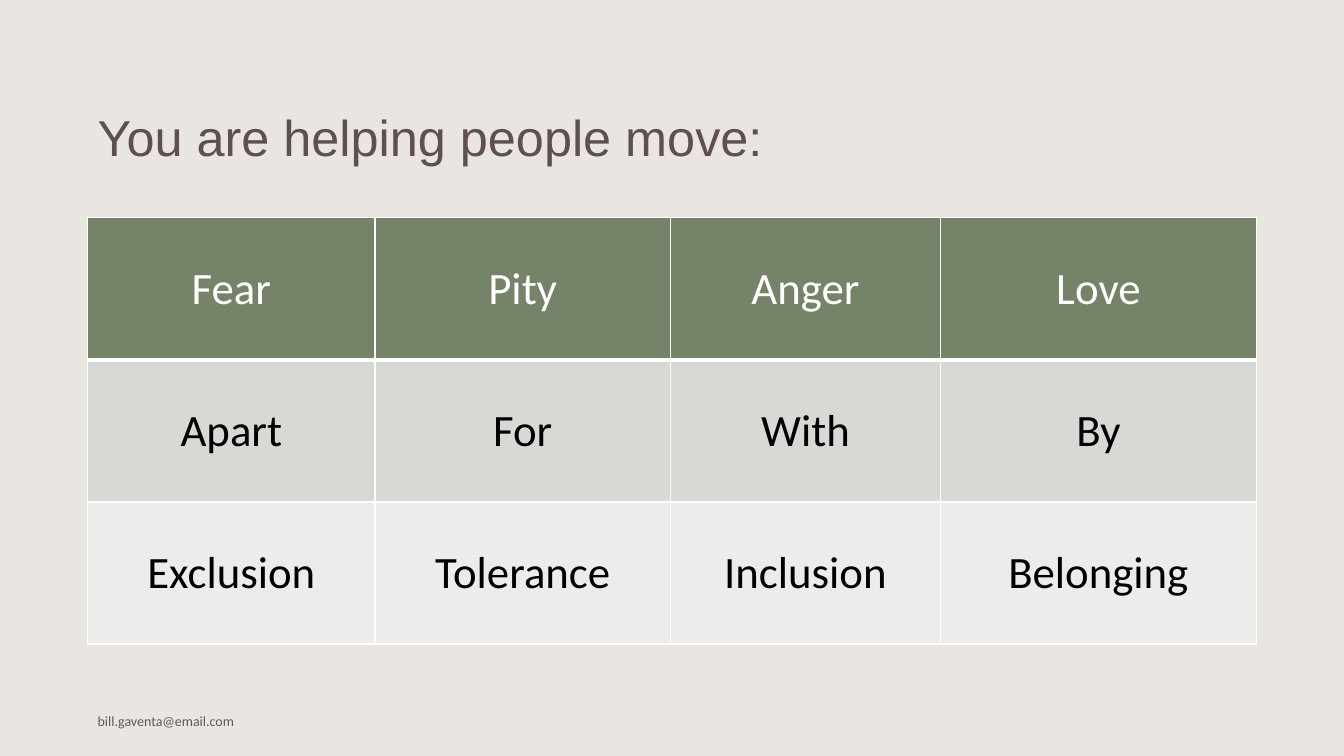
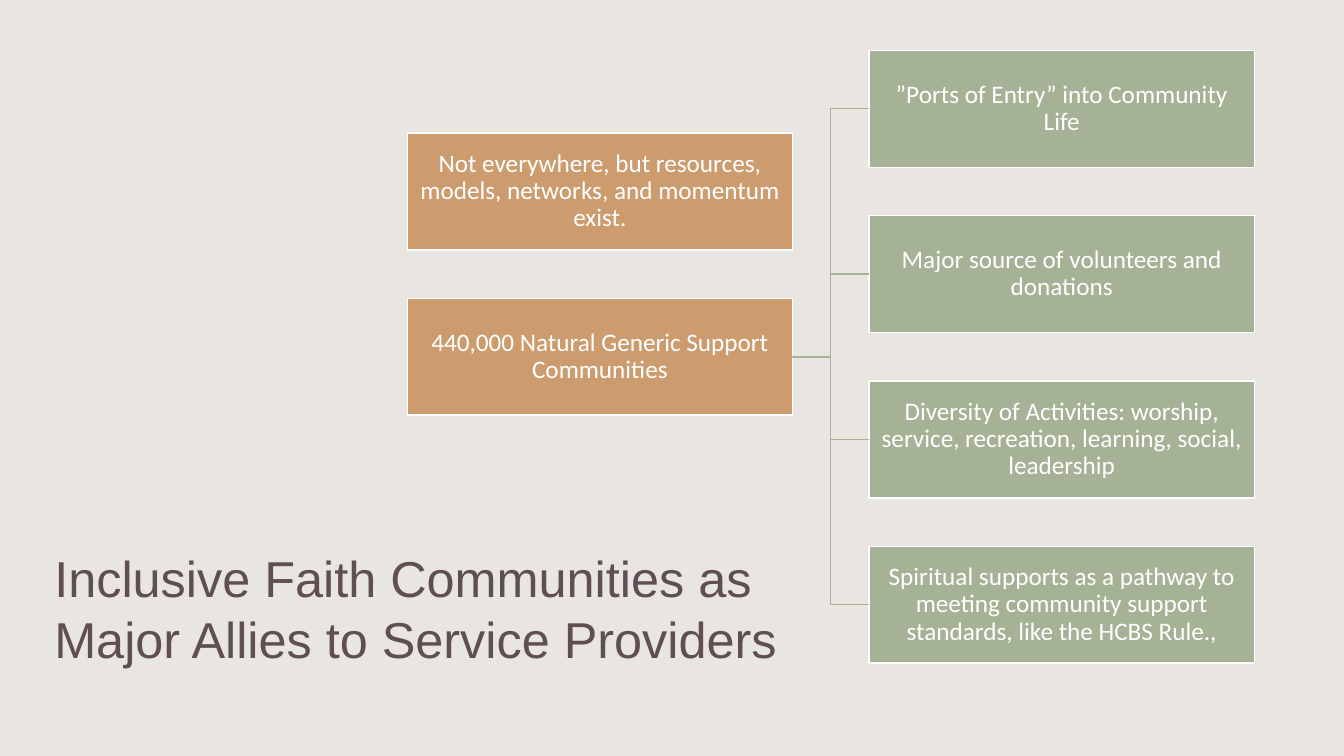
from lxml.etree import SubElement
from pptx import Presentation
from pptx.dml.color import RGBColor
from pptx.enum.shapes import MSO_CONNECTOR, MSO_SHAPE
from pptx.enum.text import MSO_ANCHOR, PP_ALIGN
from pptx.oxml.ns import qn
from pptx.util import Inches, Pt

COLORS = {
    "page": "E9E5E1", "title": "5F4F55", "foot": "5D5C5A",
    "white": "FFFFFF", "black": "000000",
    "head": "758468", "band": "D6D9D4", "pale": "ECEDEB",
    "tan": "CC9C6F", "sage": "A5B295",
}
FONTS = {
    "title": {"name": "Arial", "size": Pt(36)},
    "foot": {"name": "Calibri", "size": Pt(10)},
    "cell": {"name": "Calibri", "size": Pt(32), "bold": False},
    "box": {"name": "Calibri", "size": Pt(18)},
}

MOVES = {
    "title": "You are helping people move:",
    "footer": "bill.gaventa@email.com",
    "widths": [2.85, 2.93, 2.68, 3.13],
    "height": 1.41,
    # fill, text colour, cell texts
    "rows": [
        ("head", "white", ["Fear", "Pity", "Anger", "Love"]),
        ("band", "black", ["Apart", "For", "With", "By"]),
        ("pale", "black", ["Exclusion", "Tolerance", "Inclusion", "Belonging"]),
    ],
}
ALLIES = {
    "title": "Inclusive Faith Communities as\vMajor Allies to Service Providers",
    "roots": [
        "Not everywhere, but resources, models, networks, and momentum exist.",
        "440,000 Natural Generic Support Communities",
    ],
    "leaves": [
        "”Ports of Entry” into Community Life",
        "Major source of volunteers and donations",
        "Diversity of Activities: worship, service, recreation, learning, "
        "social, leadership",
        "Spiritual supports as a pathway to meeting community support "
        "standards, like the HCBS Rule.,",
    ],
}
BOX_W, BOX_H, PITCH, TOP = 3.82, 1.16, 1.64, 0.5
ROOT_X, LEAF_X = 4.04, 8.62


def rgb(name):
    return RGBColor.from_string(COLORS[name])


def write(frame, text, style, color, align=PP_ALIGN.LEFT):
    frame.text = text
    for para in frame.paragraphs:
        para.alignment = align
        for key, value in FONTS[style].items():
            setattr(para.font, key, value)
        para.font.color.rgb = rgb(color)


def add_text(slide, text, style, color, left, top, width, height):
    frame = slide.shapes.add_textbox(
        *map(Inches, (left, top, width, height))).text_frame
    frame.word_wrap = True
    frame.vertical_anchor = MSO_ANCHOR.MIDDLE
    write(frame, text, style, color)


def add_edges(cell, top, bottom):
    """Give a cell white borders; top and bottom are widths in points."""
    props = cell._tc.get_or_add_tcPr()
    for tag, width in (("L", 1), ("R", 1), ("T", top), ("B", bottom)):
        edge = SubElement(props, qn("a:ln" + tag), w=str(Pt(width)))
        fill = SubElement(edge, qn("a:solidFill"))
        SubElement(fill, qn("a:srgbClr"), val=COLORS["white"])


def add_grid(slide, data, left, top):
    rows, widths = data["rows"], data["widths"]
    size = (sum(widths), data["height"] * len(rows))
    table = slide.shapes.add_table(
        len(rows), len(widths), *map(Inches, (left, top, *size))).table
    for col, width in zip(table.columns, widths):
        col.width = Inches(width)
    for r, (fill, color, texts) in enumerate(rows):
        table.rows[r].height = Inches(data["height"])
        for c, text in enumerate(texts):
            cell = table.cell(r, c)
            add_edges(cell, 3 if r == 1 else 1, 3 if r == 0 else 1)
            cell.fill.solid()
            cell.fill.fore_color.rgb = rgb(fill)
            cell.vertical_anchor = MSO_ANCHOR.MIDDLE
            write(cell.text_frame, text, "cell", color, PP_ALIGN.CENTER)


def add_box(slide, text, fill, left, top):
    box = slide.shapes.add_shape(
        MSO_SHAPE.RECTANGLE, *map(Inches, (left, top, BOX_W, BOX_H)))
    box.shadow.inherit = False
    box.fill.solid()
    box.fill.fore_color.rgb = rgb(fill)
    box.line.color.rgb = rgb("white")
    box.line.width = Pt(1)
    frame = box.text_frame
    frame.word_wrap = True
    frame.vertical_anchor = MSO_ANCHOR.MIDDLE
    for side in ("left", "top", "right", "bottom"):
        setattr(frame, "margin_" + side, Inches(0.1))
    write(frame, text, "box", "white", PP_ALIGN.CENTER)
    frame.paragraphs[0].line_spacing = 0.9
    return box


def add_stack(slide, texts, fill, left, top):
    return [add_box(slide, text, fill, left, top + i * PITCH)
            for i, text in enumerate(texts)]


def link(slide, root, leaf):
    line = slide.shapes.add_connector(MSO_CONNECTOR.ELBOW, 0, 0, 0, 0)
    line.begin_connect(root, 3)
    line.end_connect(leaf, 1)
    line.line.color.rgb = rgb("sage")
    line.line.width = Pt(1)
    SubElement(line._element.spPr, qn("a:effectLst"))


def add_moves(slide):
    add_text(slide, MOVES["title"], "title", "title", 0.87, 0.55, 7.46, 1.61)
    add_text(slide, MOVES["footer"], "foot", "foot", 0.87, 6.98, 7.39, 0.35)
    add_grid(slide, MOVES, 0.87, 2.16)


def add_allies(slide):
    add_text(slide, ALLIES["title"], "title", "title", 0.44, 5.43, 7.48, 1.2)
    roots = add_stack(slide, ALLIES["roots"], "tan", ROOT_X, TOP + PITCH / 2)
    for leaf in add_stack(slide, ALLIES["leaves"], "sage", LEAF_X, TOP):
        link(slide, roots[-1], leaf)


def main():
    deck = Presentation()
    deck.slide_width, deck.slide_height = Inches(13.33), Inches(7.5)
    page = deck.slide_master.background.fill
    page.solid()
    page.fore_color.rgb = rgb("page")
    for build in (add_moves, add_allies):
        build(deck.slides.add_slide(deck.slide_layouts[6]))
    deck.save("out.pptx")


if __name__ == "__main__":
    main()
